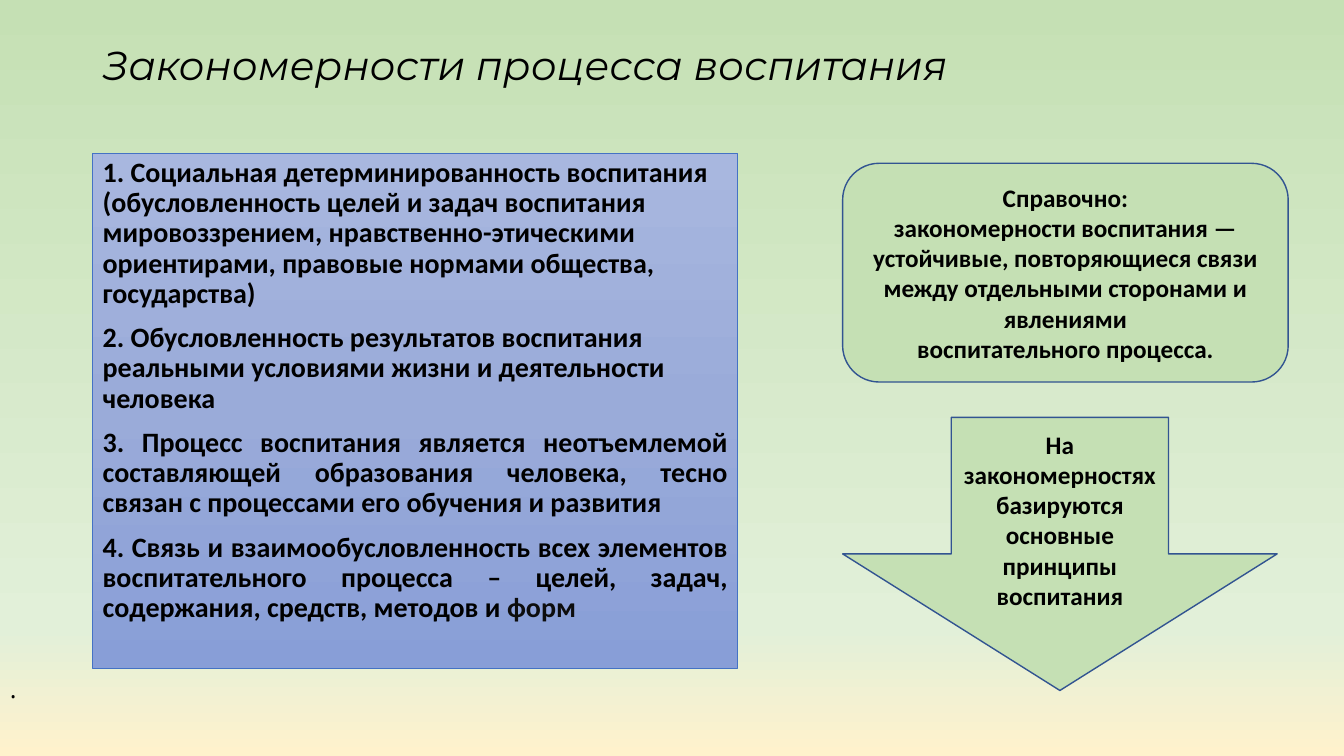
from lxml import etree
from pptx import Presentation
from pptx.dml.color import RGBColor
from pptx.enum.shapes import MSO_SHAPE
from pptx.enum.text import MSO_ANCHOR, PP_ALIGN
from pptx.oxml.ns import qn
from pptx.util import Inches, Pt

RECTANGLE = MSO_SHAPE.RECTANGLE
ROUNDED = MSO_SHAPE.ROUNDED_RECTANGLE
DOWN_ARROW = MSO_SHAPE.DOWN_ARROW
TOP, MIDDLE = MSO_ANCHOR.TOP, MSO_ANCHOR.MIDDLE
LEFT, CENTER, JUSTIFY = PP_ALIGN.LEFT, PP_ALIGN.CENTER, PP_ALIGN.JUSTIFY

BLACK = RGBColor(0x00, 0x00, 0x00)
DARK_GRAY = RGBColor(0x0D, 0x0D, 0x0D)
GREEN = RGBColor(0xC5, 0xE0, 0xB4)
PALE_GREEN = RGBColor(0xE2, 0xF0, 0xD9)
CREAM = RGBColor(0xFF, 0xF2, 0xCC)
NAVY = RGBColor(0x32, 0x54, 0x91)
BLUE = RGBColor(0x44, 0x72, 0xC4)
LIGHT_BLUE = RGBColor(0xA8, 0xB7, 0xDF)
MID_BLUE = RGBColor(0x9A, 0xAB, 0xD9)
DEEP_BLUE = RGBColor(0x88, 0x9E, 0xD7)

SLIDE_WIDTH, SLIDE_HEIGHT = Inches(13.33), Inches(7.5)

# Left edges of the two columns, in percent of the slide width
LEFT_COLUMN, RIGHT_COLUMN = 6.9, 62.7

LAWS = [
    ("1. Социальная детерминированность воспитания (обусловленность целей и задач "
     "воспитания мировоззрением, нравственно-этическими ориентирами, правовые "
     "нормами общества, государства)", LEFT),
    ("2. Обусловленность результатов воспитания реальными условиями жизни и "
     "деятельности человека", LEFT),
    ("3. Процесс воспитания является неотъемлемой составляющей образования "
     "человека, тесно связан с процессами его обучения и развития", JUSTIFY),
    ("4. Связь и взаимообусловленность всех элементов воспитательного процесса – "
     "целей, задач, содержания, средств, методов и ", JUSTIFY),
]
DEFINITION = ("Справочно:\vзакономерности воспитания —устойчивые, повторяющиеся связи "
              "между отдельными сторонами и явлениями\vвоспитательного процесса.")
CONCLUSION = "На закономерностях базируются основные принципы воспитания"


def share(left, top, width, height):
    """Turn percentages of the slide into lengths."""
    return (int(SLIDE_WIDTH * left / 100), int(SLIDE_HEIGHT * top / 100),
            int(SLIDE_WIDTH * width / 100), int(SLIDE_HEIGHT * height / 100))


def set_gradient(fill, element, stops):
    """Fill from top to bottom; stops are (percent, colour) pairs."""
    fill.gradient()
    fill.gradient_angle = 270
    stop_list = element.find(".//" + qn("a:gsLst"))
    for old_stop in list(stop_list):
        stop_list.remove(old_stop)
    for percent, color in stops:
        stop = etree.SubElement(stop_list, qn("a:gs"), pos=str(percent * 1000))
        etree.SubElement(stop, qn("a:srgbClr"), val=str(color))


def format_font(font, name, size, color, bold=False, italic=False):
    font.name, font.size = name, Pt(size)
    font.color.rgb = color
    font.bold, font.italic = bold, italic


def write(paragraph, text, align=LEFT, line_spacing=1.0, space_before=0, **font_format):
    """Add text to a paragraph; a vertical tab in it starts a new line."""
    paragraph.alignment = align
    paragraph.line_spacing = line_spacing
    paragraph.space_before = Pt(space_before)
    for index, line in enumerate(text.split("\v")):
        if index:
            paragraph.add_line_break()
        run = paragraph.add_run()
        run.text = line
        format_font(run.font, **font_format)


def add_label(slide, box, text, **text_format):
    frame = slide.shapes.add_textbox(*share(*box)).text_frame
    frame.word_wrap = True
    write(frame.paragraphs[0], text, **text_format)


def add_panel(slide, kind, box, line_color, line_width, anchor):
    shape = slide.shapes.add_shape(kind, *share(*box))
    shape.shadow.inherit = False
    shape.line.color.rgb = line_color
    shape.line.width = Pt(line_width)
    shape.text_frame.word_wrap = True
    shape.text_frame.vertical_anchor = anchor
    return shape


def add_laws(slide):
    panel = add_panel(slide, RECTANGLE, (LEFT_COLUMN, 20.27, 48, 68.13), BLUE, 0.5, TOP)
    set_gradient(panel.fill, panel.element,
                 [(0, LIGHT_BLUE), (50, MID_BLUE), (100, DEEP_BLUE)])
    frame = panel.text_frame
    for index, (law, align) in enumerate(LAWS):
        paragraph = frame.add_paragraph() if index else frame.paragraphs[0]
        write(paragraph, law, align=align, line_spacing=0.9,
              space_before=10 if index else 0,
              name="Calibri", size=20, color=BLACK, bold=True)
    last_word = paragraph.add_run()
    last_word.text = "форм"
    format_font(last_word.font, "Calibri", 20, DARK_GRAY, bold=True)


def add_callout(slide, kind, box, text):
    callout = add_panel(slide, kind, box, NAVY, 1, MIDDLE)
    callout.fill.solid()
    callout.fill.fore_color.rgb = GREEN
    write(callout.text_frame.paragraphs[0], text, align=CENTER,
          name="Calibri", size=18, color=BLACK, bold=True)


def main():
    presentation = Presentation()
    presentation.slide_width, presentation.slide_height = SLIDE_WIDTH, SLIDE_HEIGHT
    slide = presentation.slides.add_slide(presentation.slide_layouts[6])
    set_gradient(slide.background.fill, slide.element,
                 [(0, GREEN), (83, PALE_GREEN), (100, CREAM)])

    add_label(slide, (LEFT_COLUMN, 5.33, 86.25, 13.07),
              "Закономерности процесса воспитания", line_spacing=0.9,
              name="Montserrat", size=28.8, color=BLACK, italic=True)
    add_laws(slide)
    add_callout(slide, ROUNDED, (RIGHT_COLUMN, 21.6, 33.15, 28.93), DEFINITION)
    add_label(slide, (0, 88.4, 50, 5.33), ".", name="Open Sans", size=18, color=BLACK)
    add_callout(slide, DOWN_ARROW, (RIGHT_COLUMN, 55.2, 32.33, 36.13), CONCLUSION)
    presentation.save("out.pptx")


if __name__ == "__main__":
    main()
